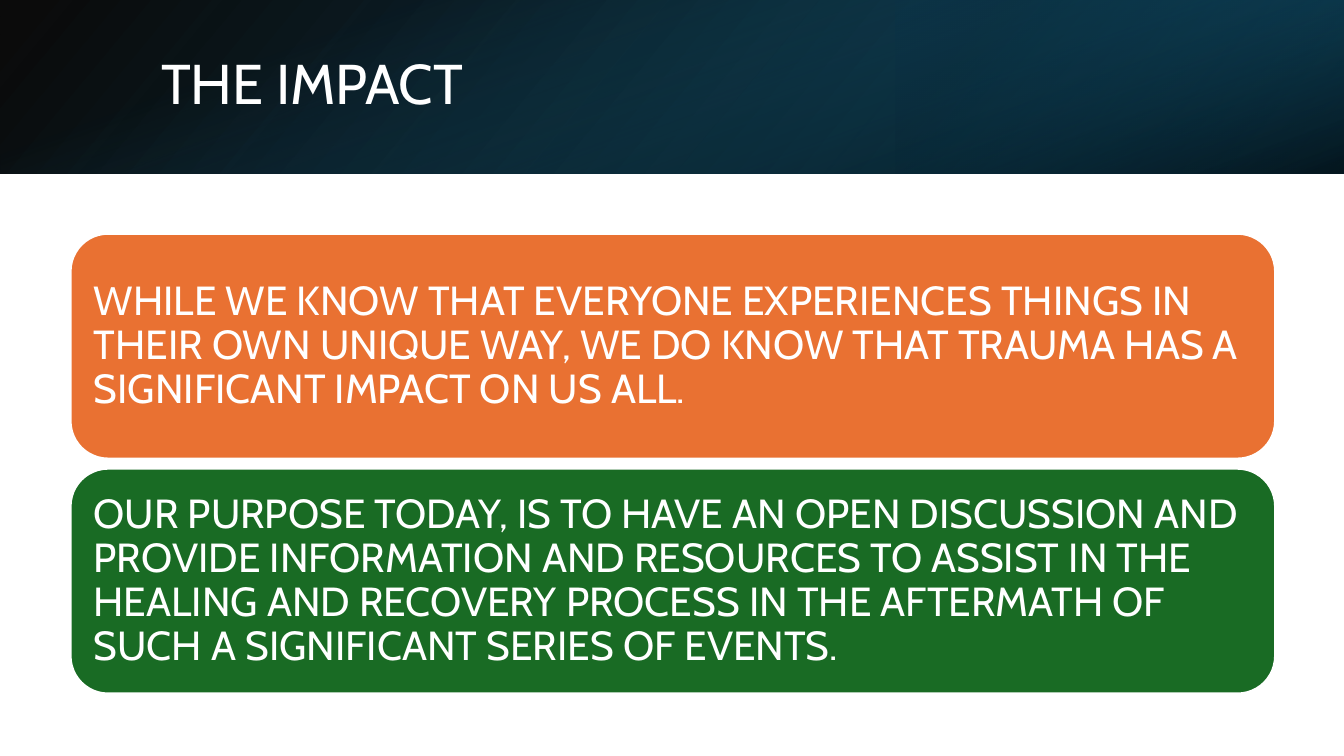
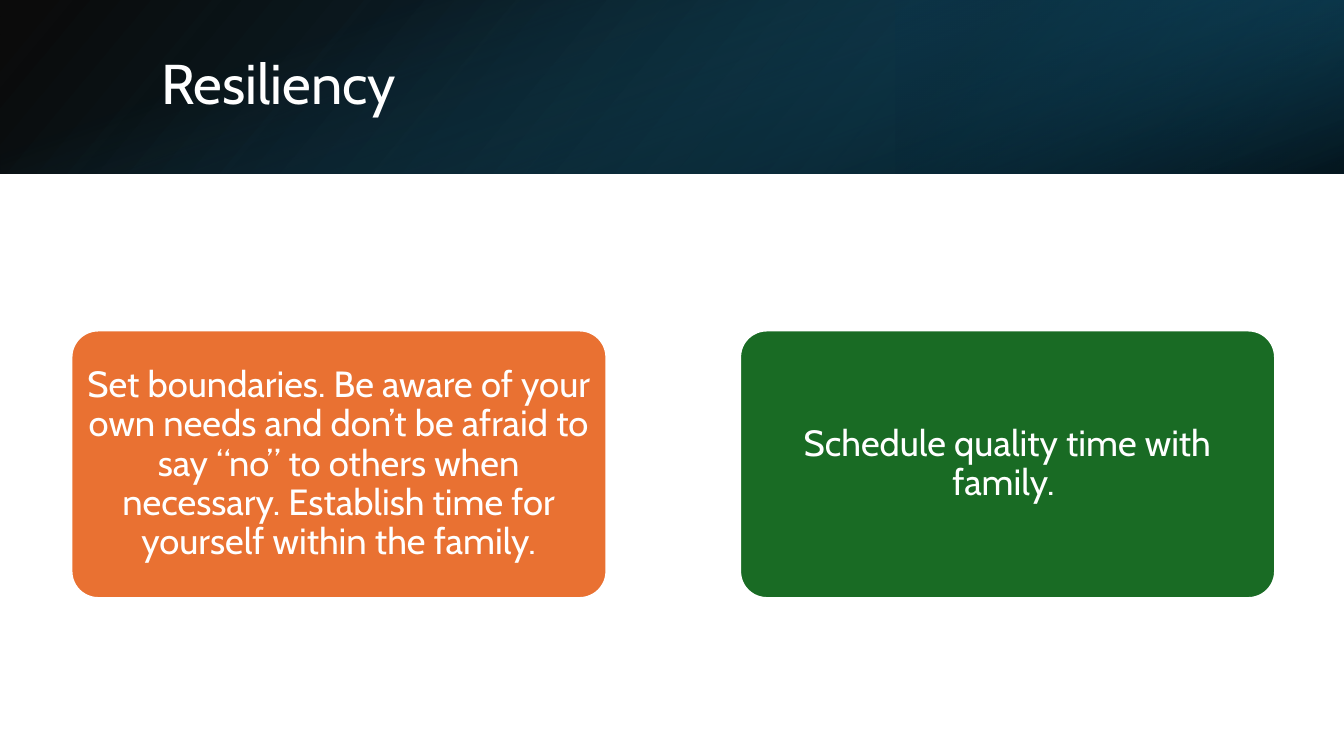
from dataclasses import dataclass

from lxml import etree
from pptx import Presentation
from pptx.dml.color import RGBColor
from pptx.enum.shapes import MSO_SHAPE
from pptx.enum.text import MSO_ANCHOR, PP_ALIGN
from pptx.oxml.ns import qn
from pptx.util import Pt

RECTANGLE = MSO_SHAPE.RECTANGLE
ROUNDED = MSO_SHAPE.ROUNDED_RECTANGLE
MIDDLE = MSO_ANCHOR.MIDDLE
LEFT, CENTER = PP_ALIGN.LEFT, PP_ALIGN.CENTER

FONT = "Cabin"
COLORS = {
    "white": "FFFFFF",
    "black": "000000",
    "orange": "E97132",
    "green": "196B24",
    "blue": "104862",
    "navy": "0B3041",
    "teal": "156082",
}
CARD_COLORS = ("orange", "green")
WIDTH, HEIGHT = 960, 540
BAND_HEIGHT = 124


@dataclass(frozen=True)
class Stop:
    position: int  # percent along the gradient
    color: str
    opacity: int = 100


@dataclass(frozen=True)
class BandLayer:
    """One gradient sheet of the header band, placed as it looks when drawn."""
    left: float
    width: float
    angle: int
    stops: tuple[Stop, ...]
    rotation: int = 0
    flipped: bool = False


@dataclass(frozen=True)
class CardStyle:
    left: float
    top: float
    width: float
    height: float
    step_x: float
    step_y: float
    corner: float
    inset_x: float
    inset_y: float
    font_size: int
    alignment: PP_ALIGN


@dataclass(frozen=True)
class SlideContent:
    title: str
    style: CardStyle
    cards: tuple[str, ...]


BAND_LAYERS = (
    BandLayer(0, WIDTH, 140, (Stop(0, "black", 96), Stop(100, "blue")), flipped=True),
    BandLayer(WIDTH * 2 / 3, WIDTH / 3, 320,
              (Stop(19, "navy", 68), Stop(100, "teal", 79)), rotation=180, flipped=True),
    BandLayer(0, WIDTH, 340, (Stop(23, "teal", 0), Stop(99, "black", 74)), rotation=90),
)

STACKED = CardStyle(50.4, 167, 860.4, 160.6, 0, 167.8, 0.1667, 8.7, 8.7, 29, LEFT)
SIDE_BY_SIDE = CardStyle(51, 236, 382.2, 191.2, 477.6, 0, 0.1, 3.6, 2.9, 26, CENTER)

SLIDES = (
    SlideContent("THE IMPACT", STACKED, (
        "WHILE WE KNOW THAT EVERYONE EXPERIENCES THINGS IN THEIR OWN UNIQUE WAY, "
        "WE DO KNOW THAT TRAUMA HAS A SIGNIFICANT IMPACT ON US ALL.",
        "OUR PURPOSE TODAY, IS TO HAVE AN OPEN DISCUSSION AND PROVIDE INFORMATION "
        "AND RESOURCES TO ASSIST IN THE HEALING AND RECOVERY PROCESS IN THE "
        "AFTERMATH OF SUCH A SIGNIFICANT SERIES OF EVENTS.",
    )),
    SlideContent("Resiliency", SIDE_BY_SIDE, (
        "Set boundaries. Be aware of your own needs and don’t be afraid to say “no” "
        "to others when necessary. Establish time for yourself within the family.",
        "Schedule quality time with family. ",
    )),
)


def rgb(name: str) -> RGBColor:
    return RGBColor.from_string(COLORS[name])


def set_text(shape, text: str, size: int, alignment: PP_ALIGN = LEFT) -> None:
    frame = shape.text_frame
    frame.text = text
    frame.word_wrap = True
    frame.vertical_anchor = MIDDLE
    paragraph = frame.paragraphs[0]
    paragraph.alignment = alignment
    paragraph.line_spacing = 0.9
    font = paragraph.runs[0].font
    font.name = FONT
    font.size = Pt(size)
    font.color.rgb = rgb("white")


def set_gradient(shape, layer: BandLayer) -> None:
    """Give the shape a linear gradient with per-stop opacity."""
    gradient = etree.Element(qn("a:gradFill"), rotWithShape="1")
    stop_list = etree.SubElement(gradient, qn("a:gsLst"))
    for stop in layer.stops:
        entry = etree.SubElement(stop_list, qn("a:gs"), pos=str(stop.position * 1000))
        color = etree.SubElement(entry, qn("a:srgbClr"), val=COLORS[stop.color])
        etree.SubElement(color, qn("a:alpha"), val=str(stop.opacity * 1000))
    etree.SubElement(gradient, qn("a:lin"), ang=str(layer.angle * 60000), scaled="0")
    shape._element.spPr.find(qn("a:prstGeom")).addnext(gradient)


def add_band_layer(slide, layer: BandLayer) -> None:
    width, height = layer.width, BAND_HEIGHT
    center_x, center_y = layer.left + width / 2, height / 2
    if layer.rotation == 90:
        width, height = height, width
    shape = slide.shapes.add_shape(
        RECTANGLE, Pt(center_x - width / 2), Pt(center_y - height / 2), Pt(width), Pt(height))
    shape.shadow.inherit = False
    shape.line.fill.background()
    shape.rotation = layer.rotation
    if layer.flipped:
        shape._element.spPr.find(qn("a:xfrm")).set("flipH", "1")
    set_gradient(shape, layer)


def add_header(slide, title: str) -> None:
    for layer in BAND_LAYERS:
        add_band_layer(slide, layer)
    title_box = slide.shapes.add_textbox(Pt(108), Pt(27.4), Pt(790), Pt(69))
    set_text(title_box, title, 40)


def add_card(slide, style: CardStyle, index: int, text: str) -> None:
    card = slide.shapes.add_shape(
        ROUNDED, Pt(style.left + index * style.step_x), Pt(style.top + index * style.step_y),
        Pt(style.width), Pt(style.height))
    card.adjustments[0] = style.corner
    card.shadow.inherit = False
    card.fill.solid()
    card.fill.fore_color.rgb = rgb(CARD_COLORS[index])
    card.line.color.rgb = rgb("white")
    card.line.width = Pt(1.5)
    frame = card.text_frame
    frame.margin_left = frame.margin_right = Pt(style.inset_x)
    frame.margin_top = frame.margin_bottom = Pt(style.inset_y)
    set_text(card, text, style.font_size, style.alignment)


def main() -> None:
    presentation = Presentation()
    presentation.slide_width, presentation.slide_height = Pt(WIDTH), Pt(HEIGHT)
    blank_layout = presentation.slide_layouts[6]
    for content in SLIDES:
        slide = presentation.slides.add_slide(blank_layout)
        add_header(slide, content.title)
        for index, text in enumerate(content.cards):
            add_card(slide, content.style, index, text)
    presentation.save("out.pptx")


if __name__ == "__main__":
    main()
